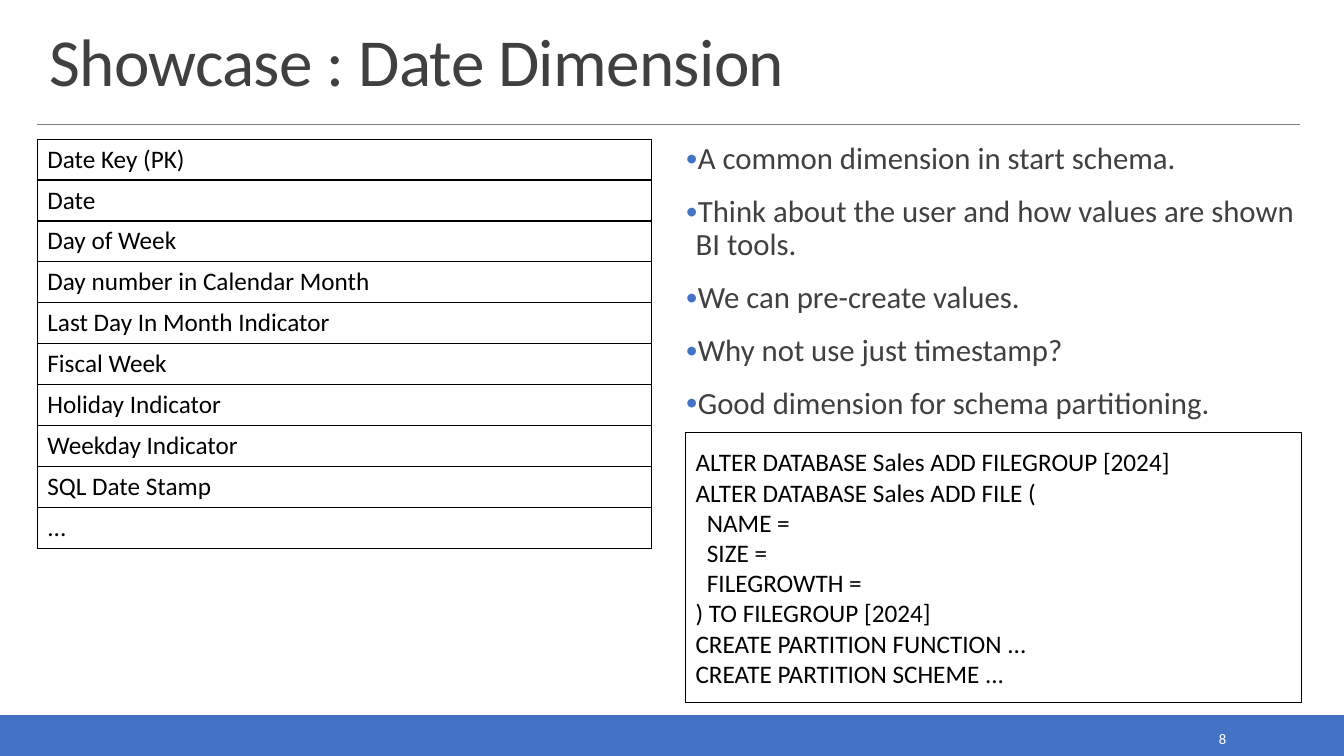
from dataclasses import dataclass

from lxml import etree
from pptx import Presentation
from pptx.dml.color import RGBColor
from pptx.enum.shapes import MSO_CONNECTOR, MSO_SHAPE
from pptx.enum.text import MSO_ANCHOR, MSO_AUTO_SIZE, PP_ALIGN
from pptx.oxml import parse_xml
from pptx.oxml.ns import nsdecls, qn
from pptx.util import Inches, Pt

RECT, STRAIGHT = MSO_SHAPE.RECTANGLE, MSO_CONNECTOR.STRAIGHT
TOP, MIDDLE, BOTTOM = MSO_ANCHOR.TOP, MSO_ANCHOR.MIDDLE, MSO_ANCHOR.BOTTOM
LEFT, RIGHT = PP_ALIGN.LEFT, PP_ALIGN.RIGHT
NO_FIT = MSO_AUTO_SIZE.NONE


@dataclass(frozen=True)
class Theme:
    font: str = "Calibri"
    accent: str = "4472C4"
    heading: str = "404040"
    rule: str = "808080"
    ink: str = "000000"
    paper: str = "FFFFFF"
    title_size: float = 48
    body_size: float = 22
    code_size: float = 18
    number_size: float = 10.5


@dataclass(frozen=True)
class Box:
    left: float
    top: float
    width: float
    height: float

    def emu(self) -> tuple:
        return tuple(Inches(v) for v in (self.left, self.top, self.width, self.height))


THEME = Theme()
TITLE_BOX = Box(0.39, 0.2, 12.52, 0.84)
TABLE_BOX = Box(0.37, 1.38, 6.09, 4.06)
BODY_BOX = Box(6.8, 1.38, 6.09, 2.91)
CODE_BOX = Box(6.8, 4.29, 6.11, 2.68)
FOOTER_BOX = Box(0, 7.1, 13.33, 0.4)
NUMBER_BOX = Box(10.83, 7.19, 1.43, 0.28)

COLUMNS = ["Date Key (PK)", "Date", "Day of Week", "Day number in Calendar Month",
           "Last Day In Month Indicator", "Fiscal Week", "Holiday Indicator",
           "Weekday Indicator", "SQL Date Stamp", "..."]
POINTS = ["A common dimension in start schema.",
          "Think about the user and how values are shown BI tools.",
          "We can pre-create values.",
          "Why not use just timestamp?",
          "Good dimension for schema partitioning."]
CODE = ["ALTER DATABASE Sales ADD FILEGROUP [2024]",
        "ALTER DATABASE Sales ADD FILE (",
        "  NAME =",
        "  SIZE =",
        "  FILEGROWTH =",
        ") TO FILEGROUP [2024]",
        "CREATE PARTITION FUNCTION ...",
        "CREATE PARTITION SCHEME ..."]


def rgb(color: str) -> RGBColor:
    return RGBColor.from_string(color)


def add_bullet(p) -> None:
    pPr = p._p.get_or_add_pPr()
    pPr.set("marL", str(Inches(0.1)))
    pPr.set("indent", str(-Inches(0.1)))
    for xml in (f'<a:buClr {nsdecls("a")}><a:srgbClr val="{THEME.accent}"/></a:buClr>',
                f'<a:buSzPct {nsdecls("a")} val="80000"/>',
                f'<a:buFont {nsdecls("a")} typeface="{THEME.font}"/>',
                f'<a:buChar {nsdecls("a")} char="•"/>'):
        pPr.append(parse_xml(xml))


def write(tf, lines: list[str], *, size: float, color: str, align=LEFT, anchor=TOP,
          spacing: float = 1, before: float = 0, after: float = 0,
          bullet: bool = False, tracking: float = 0) -> None:
    tf.word_wrap = True
    tf.vertical_anchor = anchor
    for i, line in enumerate(lines):
        p = tf.add_paragraph() if i else tf.paragraphs[0]
        if bullet:
            add_bullet(p)
        p.alignment = align
        p.line_spacing = spacing
        p.space_before = Pt(before if i else 0)
        p.space_after = Pt(after)
        r = p.add_run()
        r.text = line
        r.font.name, r.font.size = THEME.font, Pt(size)
        r.font.color.rgb = rgb(color)
        if tracking:
            r._r.get_or_add_rPr().set("spc", str(round(tracking * 100)))


def place(sp, box: Box) -> None:
    sp.left, sp.top, sp.width, sp.height = box.emu()


def add_rect(s, box: Box, *, line: str, width: float, fill: str = ""):
    sp = s.shapes.add_shape(RECT, *box.emu())
    sp.shadow.inherit = False
    if fill:
        sp.fill.solid()
        sp.fill.fore_color.rgb = rgb(fill)
    else:
        sp.fill.background()
    sp.line.color.rgb = rgb(line)
    sp.line.width = Pt(width)
    return sp


def add_rule(s, left: float, right: float, y: float) -> None:
    rule = s.shapes.add_connector(STRAIGHT, Inches(left), Inches(y), Inches(right), Inches(y))
    rule.line.color.rgb = rgb(THEME.rule)
    rule.line.width = Pt(0.5)
    etree.SubElement(rule._element.spPr, qn("a:effectLst"))


def add_column_table(s, box: Box, names: list[str]) -> None:
    table = s.shapes.add_table(len(names), 1, *box.emu()).table
    table.first_row = table.horz_banding = False
    for i, name in enumerate(names):
        table.rows[i].height = Inches(box.height / len(names))
        cell = table.cell(i, 0)
        tcPr = cell._tc.get_or_add_tcPr()
        for side in "LRTB":
            tcPr.append(parse_xml(
                f'<a:ln{side} {nsdecls("a")} w="{Pt(1)}"><a:solidFill>'
                f'<a:srgbClr val="{THEME.ink}"/></a:solidFill></a:ln{side}>'))
        cell.fill.background()
        write(cell.text_frame, [name], size=THEME.code_size, color=THEME.ink)


def main() -> None:
    prs = Presentation()
    prs.slide_width, prs.slide_height = Inches(13.33), Inches(7.5)
    s = prs.slides.add_slide(prs.slide_layouts[1])

    # Footer band and heading rule
    add_rect(s, FOOTER_BOX, line=THEME.accent, width=1.25, fill=THEME.accent)
    add_rule(s, 0.37, 12.89, 1.23)

    # Title
    title = s.shapes.title
    place(title, TITLE_BOX)
    title.text_frame.auto_size = NO_FIT
    write(title.text_frame, ["Showcase : Date Dimension"], size=THEME.title_size,
          color=THEME.heading, anchor=BOTTOM, spacing=0.85, tracking=-0.5)

    # Dimension columns
    add_column_table(s, TABLE_BOX, COLUMNS)

    # Bullet points
    body = s.placeholders[1]
    place(body, BODY_BOX)
    tf = body.text_frame
    tf.auto_size = NO_FIT
    tf.margin_left = tf.margin_right = 0
    tf.margin_top = tf.margin_bottom = Inches(0.04)
    write(tf, POINTS, size=THEME.body_size, color=THEME.heading, spacing=0.9,
          before=12, after=2, bullet=True)

    # Partitioning code
    code = add_rect(s, CODE_BOX, line=THEME.ink, width=0.75)
    write(code.text_frame, CODE, size=THEME.code_size, color=THEME.ink, anchor=MIDDLE)

    # Slide number
    number = s.shapes.add_textbox(*NUMBER_BOX.emu())
    write(number.text_frame, ["8"], size=THEME.number_size, color=THEME.paper,
          align=RIGHT, anchor=MIDDLE)

    prs.save("out.pptx")


if __name__ == "__main__":
    main()
